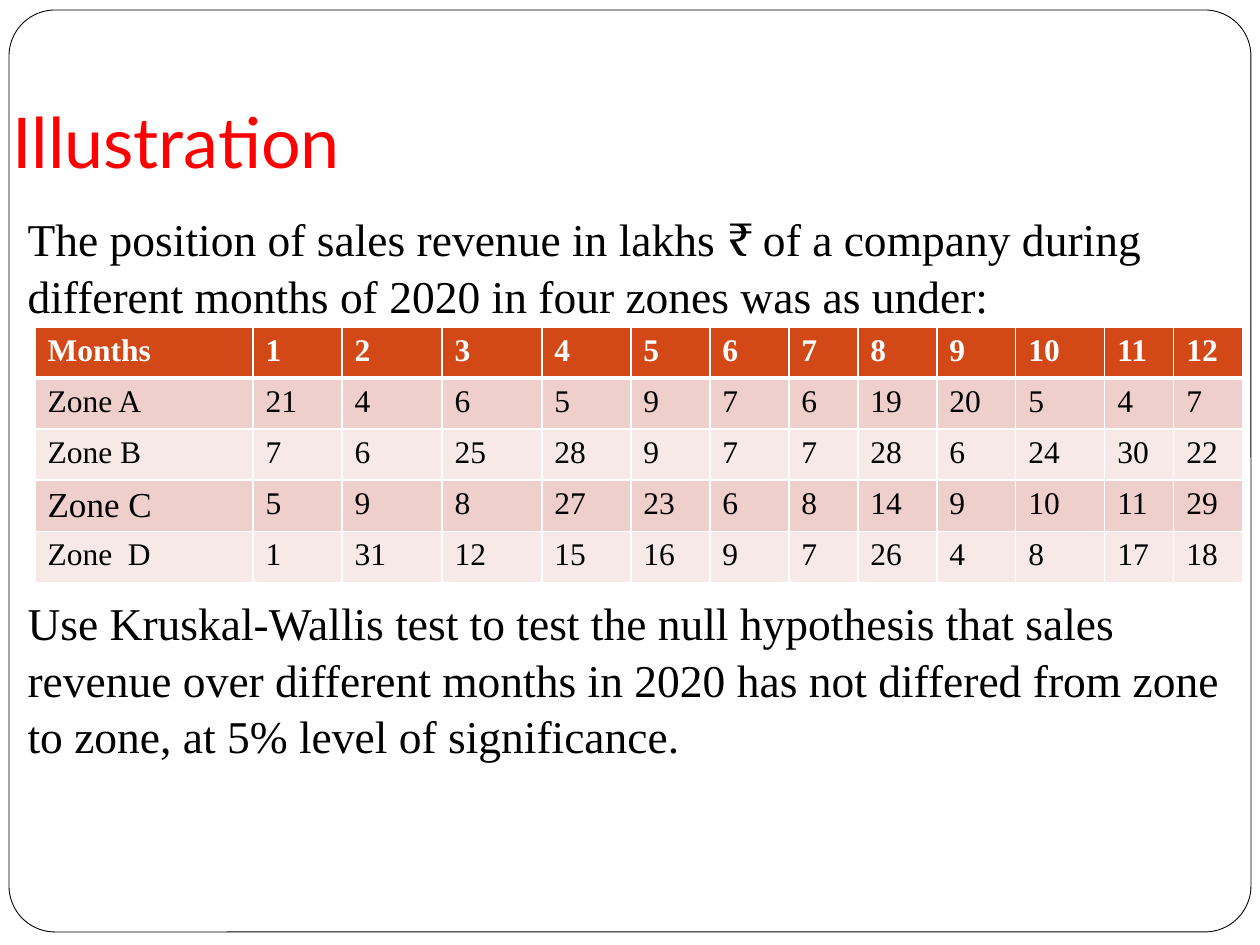
from lxml import etree
from pptx import Presentation
from pptx import util as u
from pptx.dml.color import RGBColor
from pptx.enum import shapes, text
from pptx.oxml.ns import qn

WHITE = RGBColor(0xFF, 0xFF, 0xFF)
BLACK = RGBColor(0, 0, 0)
RED = RGBColor(0xFF, 0, 0)
ORANGE = RGBColor(0xD3, 0x48, 0x17)
BANDS = RGBColor(0xEF, 0xCF, 0xCC), RGBColor(0xF7, 0xE9, 0xE8)

HEADER = ["Months"] + [str(month) for month in range(1, 13)]
ZONES = {
    "Zone A": [21, 4, 6, 5, 9, 7, 6, 19, 20, 5, 4, 7],
    "Zone B": [7, 6, 25, 28, 9, 7, 7, 28, 6, 24, 30, 22],
    "Zone C": [5, 9, 8, 27, 23, 6, 8, 14, 9, 10, 11, 29],
    "Zone  D": [1, 31, 12, 15, 16, 9, 7, 26, 4, 8, 17, 18],
}
COLUMN_WIDTHS = [218, 89, 100, 100, 89, 79, 79, 69, 79, 79, 89, 69, 69]
ROW_HEIGHT = 51


def px(length):
    return u.Emu(round(length * 914400 / 126))


class SlideBuilder:
    serif, sans = "Times New Roman", "Lato"

    def __init__(self, page):
        self.page = page

    def place(self, shape, left, top, width, height):
        shape.left, shape.top = px(left), px(top)
        shape.width, shape.height = px(width), px(height)

    def style(self, para, size, color, name, bold=False):
        for span in para.runs:
            span.font.size, span.font.name = u.Pt(size), name
            span.font.bold, span.font.color.rgb = bold, color

    def frame(self, left, top, width, height):
        box = self.page.shapes.add_shape(
            shapes.MSO_SHAPE.ROUNDED_RECTANGLE,
            px(left), px(top), px(width), px(height))
        box.adjustments[0] = 0.05
        box.shadow.inherit = False
        box.fill.solid()
        box.fill.fore_color.rgb = WHITE
        box.line.color.rgb = BLACK
        box.line.width = u.Pt(0.5)
        self.page.shapes._spTree.insert(2, box._element)  # behind the text

    def title(self, words, *area):
        box = self.page.shapes.title
        self.place(box, *area)
        frame = box.text_frame
        frame.text = words
        frame.auto_size = text.MSO_AUTO_SIZE.NONE
        frame.vertical_anchor = text.MSO_ANCHOR.BOTTOM
        frame.margin_bottom = u.Inches(0.1)
        para = frame.paragraphs[0]
        para.alignment = text.PP_ALIGN.LEFT
        self.style(para, 40, RED, self.sans)

    def body(self, paragraphs, gap, *area):
        box = self.page.placeholders[1]
        self.place(box, *area)
        frame = box.text_frame
        frame.text = "\n".join(paragraphs)
        frame.auto_size = text.MSO_AUTO_SIZE.NONE
        for index, para in enumerate(frame.paragraphs):
            properties = para._p.get_or_add_pPr()
            properties.set("marL", "0")
            properties.set("indent", "0")
            etree.SubElement(properties, qn("a:buNone"))
            para.line_spacing = 1.04
            para.space_before = px(gap) if index else u.Pt(0)
            self.style(para, 26, BLACK, self.serif)

    def border(self, cell, bottom):
        properties = cell._tc.get_or_add_tcPr()
        for index, side in enumerate(("lnL", "lnR", "lnT", "lnB")):
            points = bottom if side == "lnB" else 1
            line = etree.Element(qn(f"a:{side}"), w=str(u.Pt(points)))
            fill = etree.SubElement(line, qn("a:solidFill"))
            etree.SubElement(fill, qn("a:srgbClr"), val=str(WHITE))
            properties.insert(index, line)

    def table(self, rows, left, top):
        table = self.page.shapes.add_table(
            len(rows), len(COLUMN_WIDTHS), px(left), px(top),
            px(sum(COLUMN_WIDTHS)), px(ROW_HEIGHT * len(rows))).table
        for column, width in zip(table.columns, COLUMN_WIDTHS):
            column.width = px(width)
        for r, values in enumerate(rows):
            table.rows[r].height = px(ROW_HEIGHT)
            head = r == 0
            for c, value in enumerate(values):
                cell = table.cell(r, c)
                cell.text = str(value)
                cell.fill.solid()
                cell.fill.fore_color.rgb = ORANGE if head else BANDS[(r - 1) % 2]
                self.border(cell, 3 if head else 1)
                self.style(cell.text_frame.paragraphs[0],
                           20 if value == "Zone C" else 18,
                           WHITE if head else BLACK, self.serif, head)


def main():
    deck = Presentation()
    deck.slide_width, deck.slide_height = px(1260), px(945)
    builder = SlideBuilder(deck.slides.add_slide(deck.slide_layouts[1]))

    # Rounded page frame and heading
    builder.frame(9, 10, 1242, 922)
    builder.title("Illustration", 0, 38, 1197, 157)

    # Problem statement, with room for the table between its paragraphs
    builder.body([
        "The position of sales revenue in lakhs ₹ of a company during "
        "different months of 2020 in four zones was as under:",
        "Use Kruskal-Wallis test to test the null hypothesis that sales "
        "revenue over different months in 2020 has not differed from zone "
        "to zone, at 5% level of significance.",
    ], 270, 15, 203, 1230, 626)

    # Monthly revenue by zone
    rows = [HEADER] + [[zone, *values] for zone, values in ZONES.items()]
    builder.table(rows, 35, 327)

    deck.save("out.pptx")


if __name__ == "__main__":
    main()
